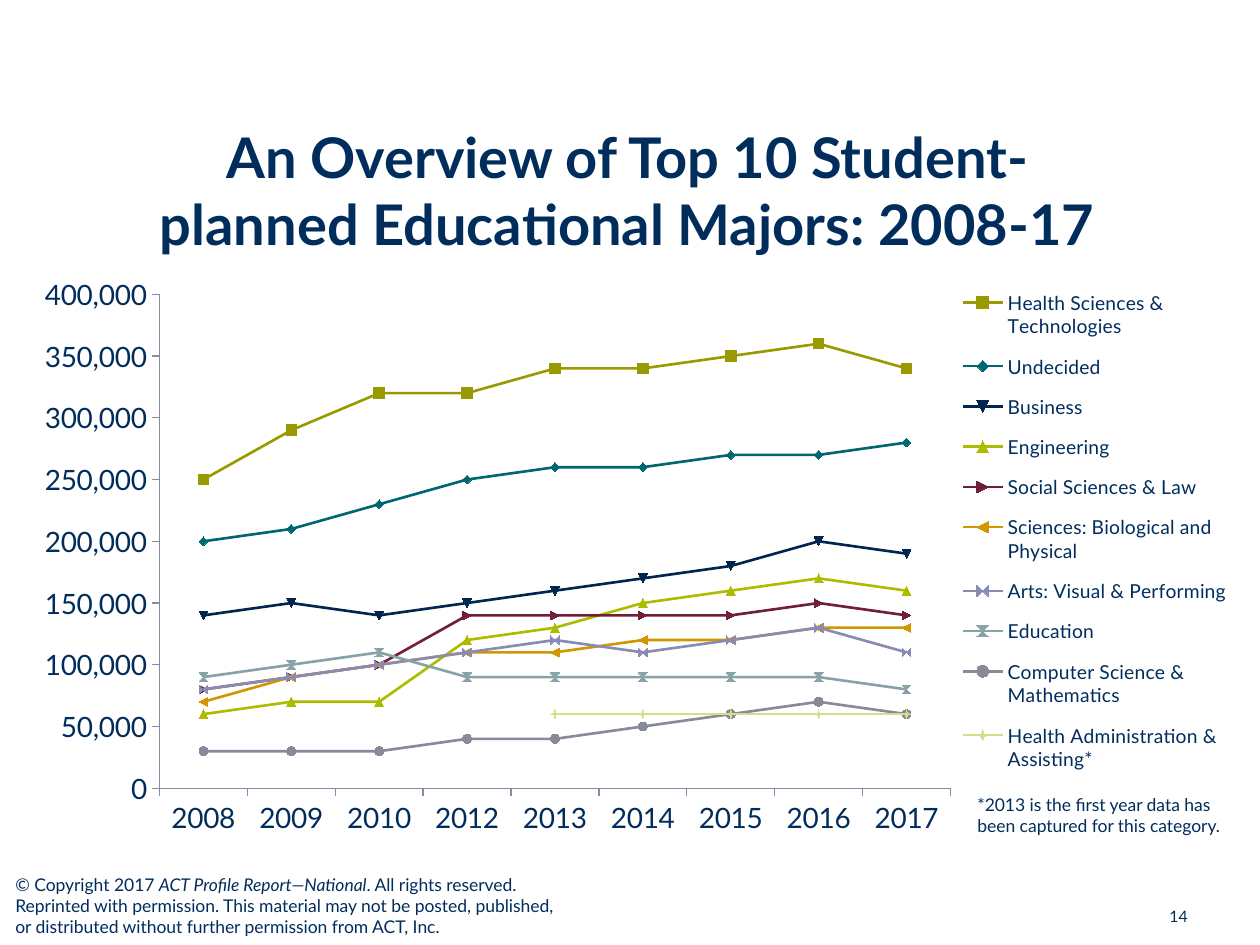
import pptx
import pptx.chart.data
import pptx.dml.color
import pptx.enum.chart
import pptx.enum.text
import pptx.oxml
import pptx.oxml.ns
import pptx.util

PX = 914400 / 126
FONT = "Lato"
COLORS = {
    "navy": "002D5C", "axis": "898BA0", "olive": "999A00", "teal": "006670",
    "midnight": "00264F", "lime": "ACBD00", "maroon": "711E3D", "gold": "D19600",
    "lavender": "898BB4", "sage": "87A3A8", "slate": "878A99", "pale": "D3DF86",
}
ALIGN = pptx.enum.text.PP_ALIGN
ANCHOR = pptx.enum.text.MSO_ANCHOR


def rgb(name):
    return pptx.dml.color.RGBColor.from_string(COLORS[name])


def add_text(paragraphs, box, size, bold=False, align=ALIGN.LEFT, anchor=ANCHOR.TOP):
    """Each paragraph is a list of (text, italic) runs."""
    frame = slide.shapes.add_textbox(*[round(v * PX) for v in box]).text_frame
    frame.word_wrap = True
    frame.vertical_anchor = anchor
    for index, runs in enumerate(paragraphs):
        paragraph = frame.add_paragraph() if index else frame.paragraphs[0]
        paragraph.alignment = align
        for text, italic in runs:
            run = paragraph.add_run()
            run.text = text
            run.font.name = FONT
            run.font.size = pptx.util.Pt(size)
            run.font.bold = bold
            run.font.italic = italic
            run.font.color.rgb = rgb("navy")


deck = pptx.Presentation()
deck.slide_width = round(1260 * PX)
deck.slide_height = round(945 * PX)
slide = deck.slides.add_slide(deck.slide_layouts[6])

# Slide number and title
add_text([[("14", False)]], (1091, 901, 109, 31), 9, align=ALIGN.RIGHT, anchor=ANCHOR.MIDDLE)
add_text([[("An Overview of Top 10 Student-planned Educational Majors: 2008-17", False)]],
         (124, 148, 1007, 84), 32, bold=True, align=ALIGN.CENTER, anchor=ANCHOR.MIDDLE)

# Students per major, in ten thousands: name, colour, marker size, values
years = ["2008", "2009", "2010", "2012", "2013", "2014", "2015", "2016", "2017"]
majors = [
    ("Health Sciences & Technologies", "olive", 6, [25, 29, 32, 32, 34, 34, 35, 36, 34]),
    ("Undecided", "teal", 5, [20, 21, 23, 25, 26, 26, 27, 27, 28]),
    ("Business", "midnight", 5, [14, 15, 14, 15, 16, 17, 18, 20, 19]),
    ("Engineering", "lime", 5, [6, 7, 7, 12, 13, 15, 16, 17, 16]),
    ("Social Sciences & Law", "maroon", 5, [8, 9, 10, 14, 14, 14, 14, 15, 14]),
    ("Sciences: Biological and Physical", "gold", 5, [7, 9, 10, 11, 11, 12, 12, 13, 13]),
    ("Arts: Visual & Performing", "lavender", 5, [8, 9, 10, 11, 12, 11, 12, 13, 11]),
    ("Education", "sage", 5, [9, 10, 11, 9, 9, 9, 9, 9, 8]),
    ("Computer Science & Mathematics", "slate", 5, [3, 3, 3, 4, 4, 5, 6, 7, 6]),
    ("Health Administration & Assisting*", "pale", 5, [None] * 4 + [6] * 5),
]
chart_data = pptx.chart.data.CategoryChartData(number_format="#,##0")
chart_data.categories = years
for name, color, marker_size, counts in majors:
    chart_data.add_series(name, [None if v is None else v * 10000 for v in counts])

# Line chart
chart = slide.shapes.add_chart(
    pptx.enum.chart.XL_CHART_TYPE.LINE_MARKERS,
    *[round(v * PX) for v in (30, 269, 1221, 619)], chart_data).chart
chart.has_title = False
chart.font.name = FONT
chart.font.size = pptx.util.Pt(18)
chart.font.color.rgb = rgb("navy")
chart.plots[0].vary_by_categories = False
for series, (name, color, marker_size, counts) in zip(chart.plots[0].series, majors):
    series.smooth = False
    series.format.line.color.rgb = rgb(color)
    series.format.line.width = pptx.util.Pt(1.5)
    series.marker.style = pptx.enum.chart.XL_MARKER_STYLE.AUTOMATIC
    series.marker.size = marker_size
    series.marker.format.fill.solid()
    series.marker.format.fill.fore_color.rgb = rgb(color)
    series.marker.format.line.color.rgb = rgb(color)

# Axes
for axis in (chart.category_axis, chart.value_axis):
    axis.has_major_gridlines = False
    axis.major_tick_mark = pptx.enum.chart.XL_TICK_MARK.OUTSIDE
    axis.minor_tick_mark = pptx.enum.chart.XL_TICK_MARK.NONE
    axis.format.line.color.rgb = rgb("axis")
    axis.format.line.width = pptx.util.Pt(0.75)
    axis.tick_labels.font.size = pptx.util.Pt(16)
    axis.tick_labels.font.name = FONT
    axis.tick_labels.font.color.rgb = rgb("navy")
chart.value_axis.minimum_scale = 0
chart.value_axis.maximum_scale = 400000
chart.value_axis.major_unit = 50000
chart.value_axis.tick_labels.number_format = "#,##0"
chart.value_axis.tick_labels.number_format_is_linked = False

# Legend
chart.has_legend = True
chart.legend.position = pptx.enum.chart.XL_LEGEND_POSITION.RIGHT
chart.legend.include_in_layout = False
chart.legend.font.size = pptx.util.Pt(11)
chart.legend.font.name = FONT
chart.legend.font.color.rgb = rgb("navy")

# Fixed places of the plot and the legend, as shares of the chart
qn = pptx.oxml.ns.qn
plot_area = chart._chartSpace.chart.plotArea
legend = chart.legend._element
for parent, position, target, shares in (
        (plot_area, 0, '<c:layoutTarget val="inner"/>', (0.106, 0.041, 0.648, 0.798)),
        (legend, 1, "", (0.752, 0.008, 0.24, 0.83))):
    for old in parent.findall(qn("c:layout")):
        parent.remove(old)
    x, y, w, h = shares
    parent.insert(position, pptx.oxml.parse_xml(
        f'<c:layout {pptx.oxml.ns.nsdecls("c")}><c:manualLayout>{target}'
        '<c:xMode val="edge"/><c:yMode val="edge"/>'
        f'<c:x val="{x}"/><c:y val="{y}"/><c:w val="{w}"/><c:h val="{h}"/>'
        '</c:manualLayout></c:layout>'))

# Copyright and footnote
add_text([
    [("© Copyright 2017 ", False), ("ACT Profile Report—National", True),
     (". All rights reserved.", False)],
    [("Reprinted with permission. This material may not be posted, published, "
      "or distributed without further permission from ACT, Inc.", False)],
], (3, 868, 582, 77), 10)
add_text([[("*2013 is the first year data has been captured for this category.", False)]],
         (965, 788, 285, 55), 10)

deck.save("out.pptx")
